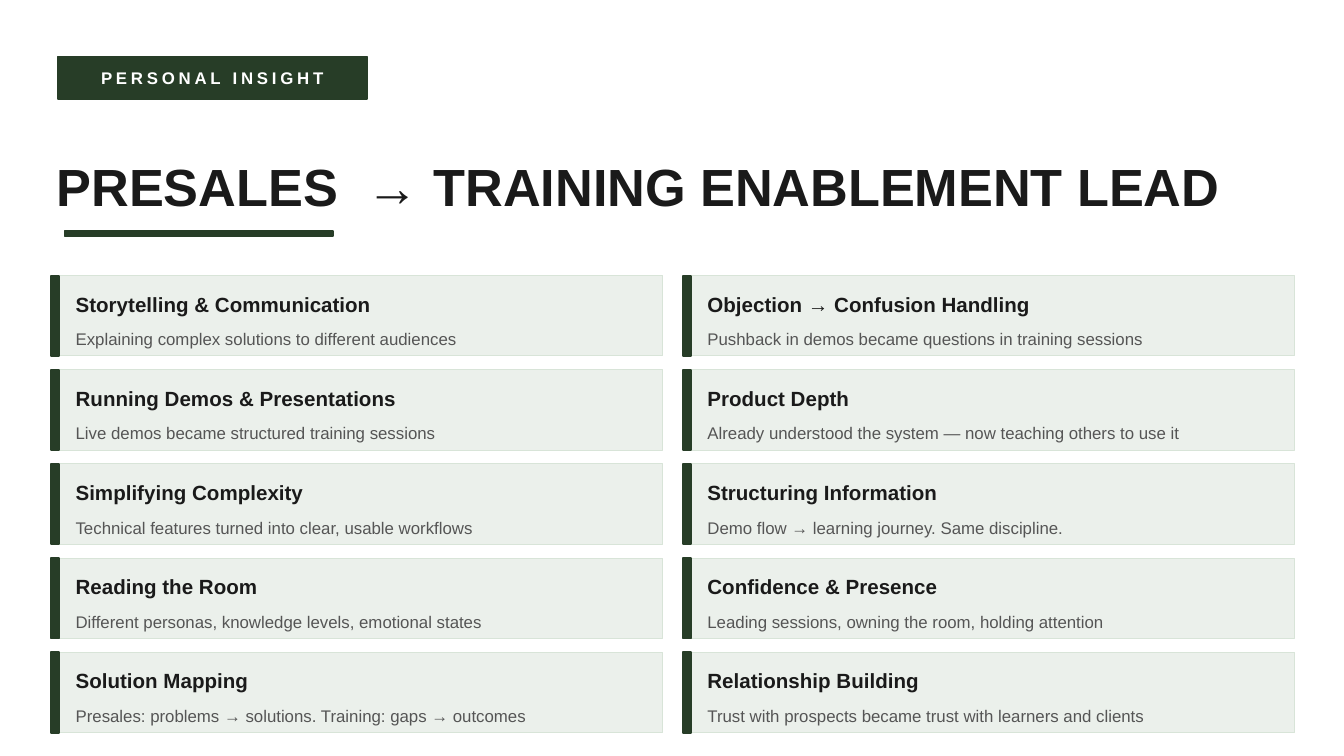
from dataclasses import dataclass

from pptx import Presentation
from pptx.dml.color import RGBColor
from pptx.enum.shapes import MSO_SHAPE
from pptx.enum.text import MSO_ANCHOR, MSO_AUTO_SIZE, PP_ALIGN
from pptx.util import Cm, Pt

RECTANGLE = MSO_SHAPE.RECTANGLE
MIDDLE = MSO_ANCHOR.MIDDLE
GROW = MSO_AUTO_SIZE.SHAPE_TO_FIT_TEXT
FIXED = MSO_AUTO_SIZE.NONE
LEFT, CENTER = PP_ALIGN.LEFT, PP_ALIGN.CENTER
TITLE_ONLY = 5


@dataclass(frozen=True)
class Theme:
    """Colours, font and type sizes of the deck."""
    font: str = "Arial"
    paper: str = "FFFFFF"
    green: str = "273D27"
    card: str = "EBF0EB"
    card_edge: str = "D8E4D8"
    ink: str = "1A1A1A"
    muted: str = "555555"
    title_size: float = 28
    heading_size: float = 11
    small_size: float = 9


THEME = Theme()

SKILLS = [
    [
        ("Storytelling & Communication", "Explaining complex solutions to different audiences"),
        ("Running Demos & Presentations", "Live demos became structured training sessions"),
        ("Simplifying Complexity", "Technical features turned into clear, usable workflows"),
        ("Reading the Room", "Different personas, knowledge levels, emotional states"),
        ("Solution Mapping", "Presales: problems → solutions. Training: gaps → outcomes"),
    ],
    [
        ("Objection → Confusion Handling", "Pushback in demos became questions in training sessions"),
        ("Product Depth", "Already understood the system — now teaching others to use it"),
        ("Structuring Information", "Demo flow → learning journey. Same discipline."),
        ("Confidence & Presence", "Leading sessions, owning the room, holding attention"),
        ("Relationship Building", "Trust with prospects became trust with learners and clients"),
    ],
]


def write_text(shape, text, *, size, color, bold=False, align=LEFT, spacing=0, fit=GROW):
    """Write one formatted line into a shape without insets."""
    frame = shape.text_frame
    frame.word_wrap = True
    frame.auto_size = fit
    frame.vertical_anchor = MIDDLE
    frame.margin_left = frame.margin_right = 0
    frame.margin_top = frame.margin_bottom = 0
    para = frame.paragraphs[0]
    para.alignment = align
    span = para.add_run()
    span.text = text
    span.font.name = THEME.font
    span.font.size = Pt(size)
    span.font.bold = bold
    span.font.color.rgb = RGBColor.from_string(color)
    if spacing:
        span.font._element.set("spc", str(spacing * 100))


def add_label(page, box, text, **style):
    """Add a text box holding one formatted line."""
    write_text(page.shapes.add_textbox(*map(Cm, box)), text, **style)


def add_panel(page, box, fill, edge, edge_width=1):
    """Add a flat rectangle and return it."""
    panel = page.shapes.add_shape(RECTANGLE, *map(Cm, box))
    panel.shadow.inherit = False
    panel.fill.solid()
    panel.fill.fore_color.rgb = RGBColor.from_string(fill)
    panel.line.color.rgb = RGBColor.from_string(edge)
    panel.line.width = Pt(edge_width)
    return panel


def add_badge(page, box, text):
    """Add the green section badge."""
    badge = add_panel(page, box, THEME.green, THEME.green)
    write_text(badge, text, size=THEME.small_size, color=THEME.paper,
               bold=True, align=CENTER, spacing=2, fit=FIXED)


def add_heading(page, box, text):
    """Place the title and the rule beneath its first word."""
    left, top, width, height = box
    title = page.shapes.title
    title.left, title.top, title.width, title.height = map(Cm, box)
    write_text(title, text, size=THEME.title_size, color=THEME.ink, bold=True)
    add_panel(page, (left + 0.15, top + 1.4, 5.08, 0.1), THEME.green, THEME.green)


def add_skill_card(page, box, heading, detail):
    """Add a card with an accent bar, a heading and a detail line."""
    left, top, width, height = box
    add_panel(page, box, THEME.card, THEME.card_edge, 0.5)
    add_panel(page, (left, top, 0.15, height), THEME.green, THEME.green)
    add_label(page, (left + 0.46, top + 0.33, 8.13, 0.41), heading,
              size=THEME.heading_size, color=THEME.ink, bold=True)
    add_label(page, (left + 0.46, top + 1.02, width - 0.71, 0.36), detail,
              size=THEME.small_size, color=THEME.muted)


def add_skill_grid(page, box, columns, gap_x=0.38, gap_y=0.26):
    """Fill the box with equal cards, column by column."""
    left, top, width, height = box
    rows = len(columns[0])
    card_width = (width - gap_x * (len(columns) - 1)) / len(columns)
    card_height = (height - gap_y * (rows - 1)) / rows
    for column, skills in enumerate(columns):
        for row, (heading, detail) in enumerate(skills):
            card = (left + column * (card_width + gap_x),
                    top + row * (card_height + gap_y), card_width, card_height)
            add_skill_card(page, card, heading, detail)


def main():
    """Build and save the deck."""
    deck = Presentation()
    deck.slide_width, deck.slide_height = Cm(25.4), Cm(14.29)
    page = deck.slides.add_slide(deck.slide_layouts[TITLE_ONLY])
    page.background.fill.solid()
    page.background.fill.fore_color.rgb = RGBColor.from_string(THEME.paper)
    add_badge(page, (1.09, 1.07, 5.84, 0.81), "PERSONAL INSIGHT")
    add_heading(page, (1.07, 2.97, 22.35, 1.09), "PRESALES  → TRAINING ENABLEMENT LEAD")
    add_skill_grid(page, (0.97, 5.21, 23.5, 8.64), SKILLS)
    deck.save("out.pptx")


if __name__ == "__main__":
    main()
